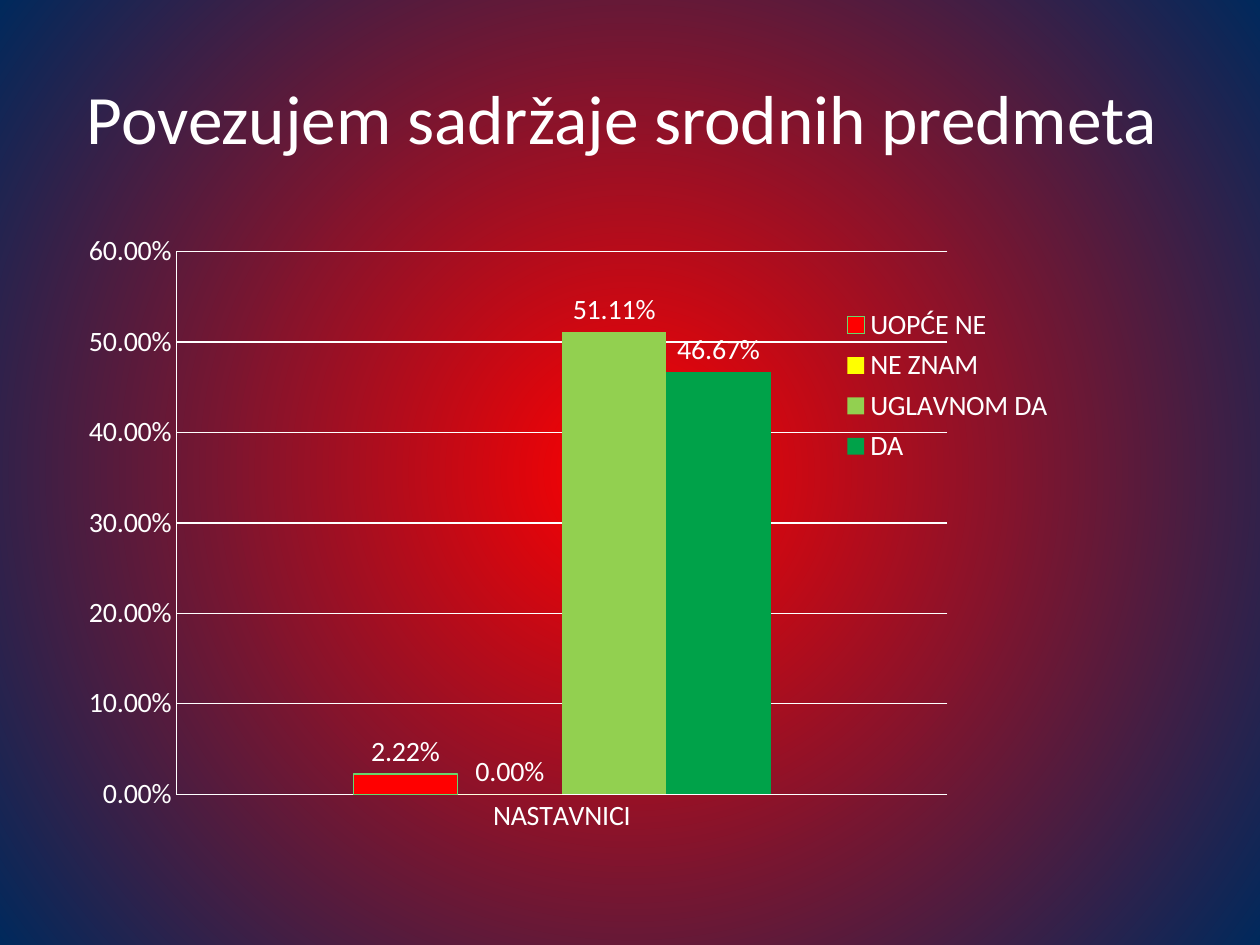
"""Build a slide with a column chart of how far teachers link related subjects."""
from lxml import etree
from pptx import Presentation
from pptx.chart.data import CategoryChartData
from pptx.dml.color import RGBColor
from pptx.enum.chart import XL_CHART_TYPE, XL_LABEL_POSITION, XL_LEGEND_POSITION, XL_TICK_MARK
from pptx.enum.text import MSO_ANCHOR, PP_ALIGN
from pptx.oxml.ns import qn
from pptx.util import Pt

WHITE = RGBColor(0xFF, 0xFF, 0xFF)
RED = RGBColor(0xFF, 0x00, 0x00)
NAVY = RGBColor(0x00, 0x29, 0x5C)
YELLOW = RGBColor(0xFF, 0xFF, 0x00)
LIME = RGBColor(0x92, 0xD0, 0x50)
GREEN = RGBColor(0x00, 0xA2, 0x49)
OUTLINE = RGBColor(0x68, 0xD6, 0x6B)
FONT = "Calibri"
PERCENT = "0.00%"
ANSWERS = [
    ("UOPĆE NE", 0.0222, RED),
    ("NE ZNAM", 0, YELLOW),
    ("UGLAVNOM DA", 0.5111, LIME),
    ("DA", 0.4667, GREEN),
]


def style_font(font, size):
    font.name = FONT
    font.size = Pt(size)
    font.color.rgb = WHITE


def set_layout(parent, index, x, y, w, h, inner=False):
    for old in parent.findall(qn("c:layout")):
        parent.remove(old)
    layout = etree.Element(qn("c:layout"))
    manual = etree.SubElement(layout, qn("c:manualLayout"))
    values = [("xMode", "edge"), ("yMode", "edge"), ("x", x), ("y", y), ("w", w), ("h", h)]
    if inner:
        values.insert(0, ("layoutTarget", "inner"))
    for tag, value in values:
        etree.SubElement(manual, qn(f"c:{tag}")).set("val", str(value))
    parent.insert(index, layout)


prs = Presentation()
prs.slide_width, prs.slide_height = Pt(720), Pt(540)
s = prs.slides.add_slide(prs.slide_layouts[5])

fill = s.background.fill
fill.gradient()
for stop, color, position in zip(fill.gradient_stops, (RED, NAVY), (0, 1)):
    stop.color.rgb = color
    stop.position = position
grad = s.element.find(".//" + qn("a:gradFill"))
grad.remove(grad.find(qn("a:lin")))
circle = etree.SubElement(grad, qn("a:path"), {"path": "circle"})
etree.SubElement(circle, qn("a:fillToRect"), {side: "50000" for side in "ltrb"})

title = s.shapes.title
title.left, title.top, title.width, title.height = Pt(36), Pt(21.6), Pt(648), Pt(90)
tf = title.text_frame
tf.text = "Povezujem sadržaje srodnih predmeta "
tf.vertical_anchor = MSO_ANCHOR.MIDDLE
p = tf.paragraphs[0]
p.alignment = PP_ALIGN.CENTER
style_font(p.font, 39.6)

data = CategoryChartData(number_format=PERCENT)
data.categories = ["NASTAVNICI"]
for name, value, color in ANSWERS:
    data.add_series(name, [value])
chart = s.shapes.add_chart(
    XL_CHART_TYPE.COLUMN_CLUSTERED, Pt(36), Pt(126), Pt(648), Pt(356.4), data
).chart
chart.has_title = False
style_font(chart.font, 10)

plot = chart.plots[0]
plot.gap_width = 339
plot.overlap = 0
plot.vary_by_categories = False
for series, (name, value, color) in zip(plot.series, ANSWERS):
    series.format.fill.solid()
    series.format.fill.fore_color.rgb = color
    labels = series.data_labels
    labels.show_value = True
    labels.number_format = PERCENT
    labels.number_format_is_linked = False
    labels.position = XL_LABEL_POSITION.OUTSIDE_END
    style_font(labels.font, 16)
line = plot.series[0].format.line
line.color.rgb = OUTLINE
line.width = Pt(0.75)

cat_axis, val_axis = chart.category_axis, chart.value_axis
for axis in (cat_axis, val_axis):
    axis.major_tick_mark = axis.minor_tick_mark = XL_TICK_MARK.NONE
    style_font(axis.tick_labels.font, 16)
val_axis.minimum_scale, val_axis.maximum_scale, val_axis.major_unit = 0, 0.6, 0.1
val_axis.has_major_gridlines = True
val_axis.tick_labels.number_format = PERCENT
val_axis.tick_labels.number_format_is_linked = False
for part in (cat_axis, val_axis, val_axis.major_gridlines):
    part.format.line.color.rgb = WHITE
    part.format.line.width = Pt(0.75)

chart.has_legend = True
legend = chart.legend
legend.position = XL_LEGEND_POSITION.RIGHT
legend.include_in_layout = True
style_font(legend.font, 16)

plot_area = chart.element.find(".//" + qn("c:plotArea"))
set_layout(plot_area, 0, 0.1, 0.05, 0.68, 0.87, inner=True)
set_layout(chart.element.find(".//" + qn("c:legend")), 1, 0.68, 0.13, 0.2, 0.27)

prs.save("out.pptx")
